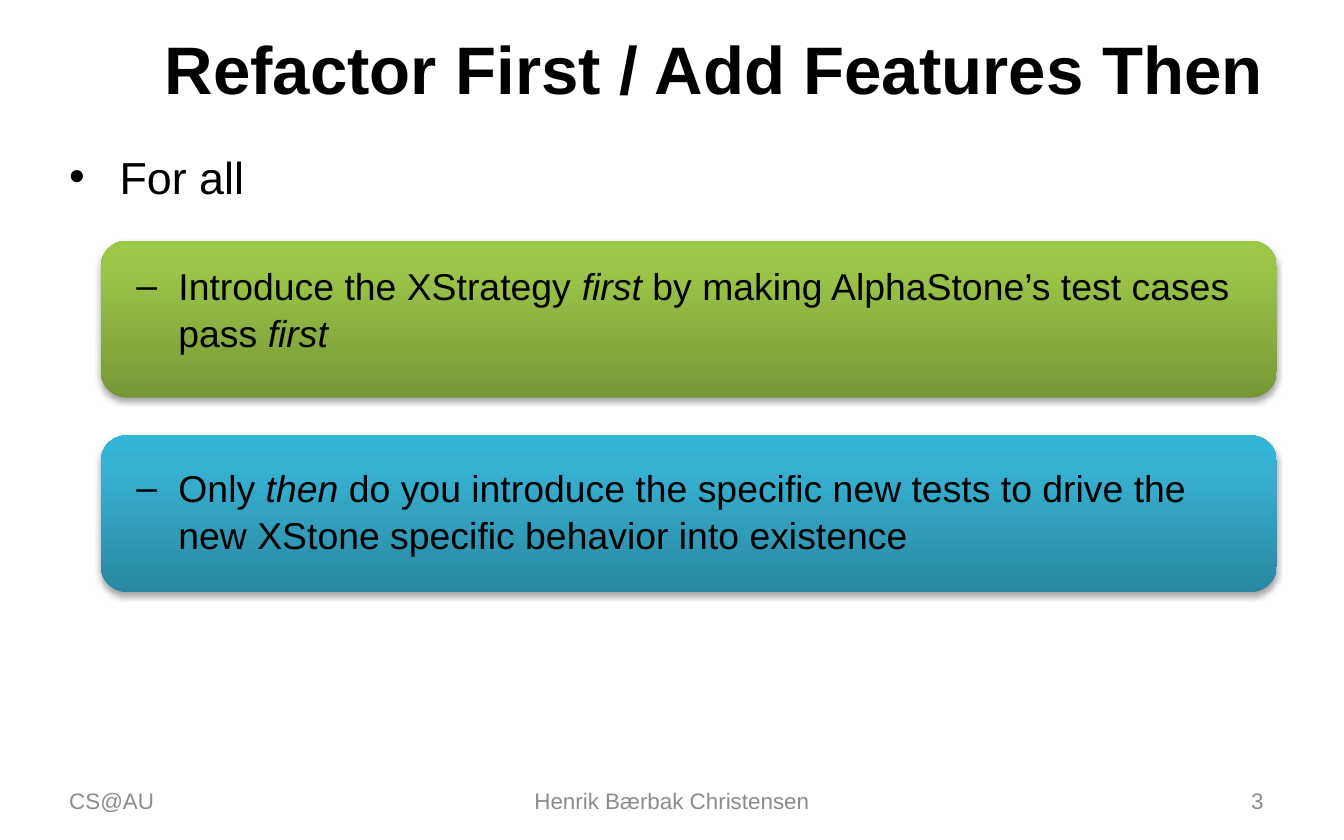
from dataclasses import dataclass

from pptx import Presentation
from pptx import util as u
from pptx.dml.color import RGBColor
from pptx.enum import shapes, text
from pptx.oxml import parse_xml
from pptx.oxml.ns import nsdecls, qn

SCALE = 9525  # EMU per px, 96 px to the inch
FONT = "Arial"
BLACK, GREY = "000000", "8C8C8C"
LEFT, CENTER, RIGHT = text.PP_ALIGN.LEFT, text.PP_ALIGN.CENTER, text.PP_ALIGN.RIGHT
Runs = tuple[tuple[str, bool], ...]  # wording, italic


@dataclass(frozen=True)
class Label:
    box: tuple[int, int, int, int]
    wording: str
    size: int
    color: str = GREY
    align: text.PP_ALIGN = LEFT
    bold: bool = False


@dataclass(frozen=True)
class Card:
    top: int
    top_margin: int
    stops: tuple[tuple[int, str], ...]  # percent from the bottom, colour
    runs: Runs


LABELS = (
    Label((48, 17, 864, 63), "Refactor First / Add Features Then", 36, BLACK, RIGHT, True),
    Label((40, 556, 224, 32), "CS@AU", 12),
    Label((328, 556, 304, 32), "Henrik Bærbak Christensen", 12, align=CENTER),
    Label((688, 556, 224, 32), "3", 12, align=RIGHT),
)
CARDS = (
    Card(172, 9, ((0, "779737"), (80, "9BC348"), (100, "9DC746")),
         (("Introduce the XStrategy ", False), ("first", True),
          (" by making AlphaStone’s test cases pass ", False), ("first", True))),
    Card(311, 14, ((0, "2A88A2"), (80, "37B1D2"), (100, "34B4D6")),
         (("Only ", False), ("then", True),
          (" do you introduce the specific new tests to drive the new XStone "
           "specific behavior into existence", False))),
)


def px(length: int) -> u.Emu:
    return u.Emu(length * SCALE)


def rgb(color: str) -> RGBColor:
    return RGBColor.from_string(color)


def set_font(paragraph, size: int, color: str, bold: bool = False) -> None:
    font = paragraph.font
    font.name, font.size, font.bold = FONT, u.Pt(size), bold
    font.color.rgb = rgb(color)


def write_bullet(paragraph, bullet: str, indent: int, size: int, runs: Runs) -> None:
    properties = paragraph._p.get_or_add_pPr()
    properties.set("marL", str(px(indent)))
    properties.set("indent", str(-px(indent)))
    paragraph.alignment = LEFT
    paragraph.line_spacing = 1.05
    properties.append(parse_xml(f'<a:buFont {nsdecls("a")} typeface="{FONT}"/>'))
    properties.append(parse_xml(f'<a:buChar {nsdecls("a")} char="{bullet}"/>'))
    set_font(paragraph, size, BLACK)
    for wording, italic in runs:
        run = paragraph.add_run()
        run.text = wording
        run.font.italic = italic


def add_text_frame(slide, box: tuple[int, int, int, int], anchor: text.MSO_ANCHOR):
    frame = slide.shapes.add_textbox(*map(px, box)).text_frame
    frame.word_wrap = True
    frame.vertical_anchor = anchor
    return frame


def add_label(slide, label: Label) -> None:
    paragraph = add_text_frame(slide, label.box, text.MSO_ANCHOR.MIDDLE).paragraphs[0]
    paragraph.text = label.wording
    paragraph.alignment = label.align
    set_font(paragraph, label.size, label.color, label.bold)


def add_gradient(shape, stops: tuple[tuple[int, str], ...]) -> None:
    shape.fill.gradient()
    stop_xml = "".join(f'<a:gs pos="{percent * 1000}"><a:srgbClr val="{color}"/></a:gs>'
                       for percent, color in stops)
    properties = shape._element.spPr
    properties.replace(properties.find(qn("a:gradFill")), parse_xml(
        f'<a:gradFill {nsdecls("a")} rotWithShape="1"><a:gsLst>{stop_xml}</a:gsLst>'
        '<a:lin ang="16200000" scaled="0"/></a:gradFill>'))


def add_shadow(shape) -> None:
    shape.shadow.inherit = False
    shape._element.spPr.find(qn("a:effectLst")).append(parse_xml(
        f'<a:outerShdw {nsdecls("a")} blurRad="{u.Pt(3.1)}" dist="{u.Pt(1.8)}" '
        'dir="5400000" rotWithShape="0"><a:srgbClr val="000000">'
        '<a:alpha val="35000"/></a:srgbClr></a:outerShdw>'))


def add_card(slide, card: Card) -> None:
    shape = slide.shapes.add_shape(shapes.MSO_SHAPE.ROUNDED_RECTANGLE,
                                   px(72), px(card.top), px(840), px(112))
    add_gradient(shape, card.stops)
    shape.line.fill.background()
    add_shadow(shape)
    frame = shape.text_frame
    frame.word_wrap = True
    frame.vertical_anchor = text.MSO_ANCHOR.TOP
    frame.margin_left, frame.margin_right = px(20), px(4)
    frame.margin_top = px(card.top_margin)
    write_bullet(frame.paragraphs[0], "–", 30, 20, card.runs)


def main() -> None:
    presentation = Presentation()
    presentation.slide_width, presentation.slide_height = px(960), px(600)
    slide = presentation.slides.add_slide(presentation.slide_layouts[6])

    # Title and footer
    for label in LABELS:
        add_label(slide, label)

    # Lead-in bullet
    lead = add_text_frame(slide, (40, 100, 872, 50), text.MSO_ANCHOR.TOP)
    write_bullet(lead.paragraphs[0], "•", 36, 24, (("For all", False),))

    # The two steps
    for card in CARDS:
        add_card(slide, card)

    presentation.save("out.pptx")


if __name__ == "__main__":
    main()
